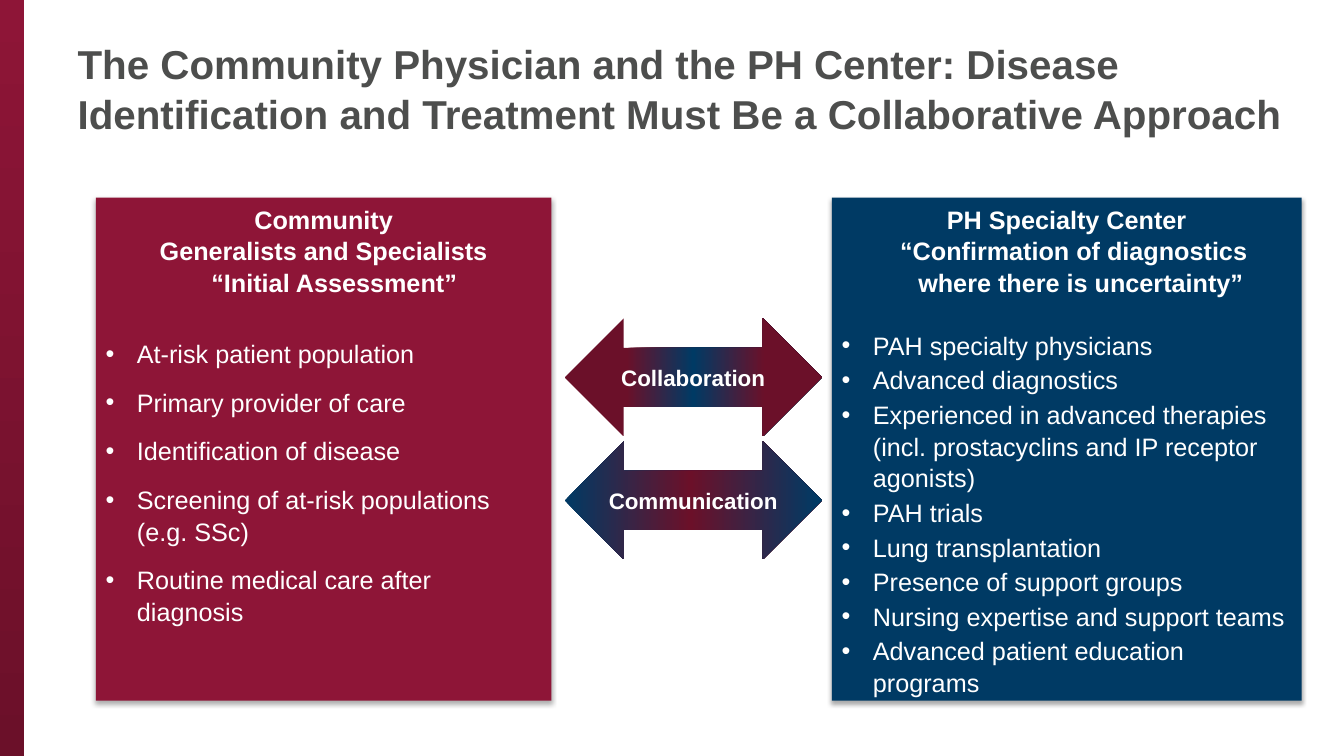
from lxml import etree
from pptx import Presentation
from pptx.dml.color import RGBColor
from pptx.enum.shapes import MSO_SHAPE as SHAPE
from pptx.enum.text import MSO_ANCHOR as ANCHOR, MSO_AUTO_SIZE as AUTO, PP_ALIGN as ALIGN
from pptx.oxml.ns import qn
from pptx.util import Inches, Pt

COLORS = {"crimson": "8E1537", "maroon": "6B1029", "navy": "003A64",
          "gray": "4D4E4D", "white": "FFFFFF", "black": "000000"}


def add_block(shape, box, stops, angle=0):
    """Add a borderless shape with a plain or gradient fill."""
    sp = slide.shapes.add_shape(shape, *[Inches(v) for v in box])
    sp.shadow.inherit = False
    sp.line.fill.background()
    if len(stops) == 1:
        sp.fill.solid()
        sp.fill.fore_color.rgb = RGBColor.from_string(COLORS[stops[0][1]])
        return sp
    sp.fill.gradient()
    sp.fill.gradient_angle = angle
    stop_list = sp._element.spPr.find(qn("a:gradFill")).find(qn("a:gsLst"))
    for old in list(stop_list):
        stop_list.remove(old)
    for pos, color in stops:
        gs = etree.SubElement(stop_list, qn("a:gs"), pos=str(pos * 1000))
        etree.SubElement(gs, qn("a:srgbClr"), val=COLORS[color])
    return sp


def style(p, size, color, bold, align):
    p.font.name = "Arial"
    p.font.size = Pt(size)
    p.font.bold = bold
    p.font.color.rgb = RGBColor.from_string(COLORS[color])
    p.alignment = align


prs = Presentation()
prs.slide_width, prs.slide_height = Inches(13.33), Inches(7.5)
slide = prs.slides.add_slide(prs.slide_layouts[5])

# Side bar
add_block(SHAPE.RECTANGLE, (-0.01, 0, 0.25, 7.51), [(0, "crimson"), (100, "maroon")], 270)

# Title
title = slide.shapes.title
title.left, title.top = Inches(0.67), Inches(0.22)
title.width, title.height = Inches(12.39), Inches(1.3)
tf = title.text_frame
tf.text = ("The Community Physician and the PH Center: Disease Identification "
           "and Treatment Must Be a Collaborative Approach")
tf.auto_size, tf.vertical_anchor = AUTO.NONE, ANCHOR.MIDDLE
style(tf.paragraphs[0], 28.8, "gray", True, ALIGN.LEFT)
tf.paragraphs[0].line_spacing = 1.04

# Panels: left, width, color, headings (text, indent), bullets (text, level),
# space before the list, space before and after each bullet
panels = [
    (0.95, 4.52, "crimson",
     [("Community", 0), ("Generalists and Specialists", 0), ("“Initial Assessment”", 0.21)],
     [("At-risk patient population", 0), ("Primary provider of care", 0),
      ("Identification of disease", 0),
      ("Screening of at-risk populations (e.g. SSc)", 0),
      ("Routine medical care after diagnosis", 0)], 28, 6, 6),
    (8.25, 4.66, "navy",
     [("PH Specialty Center", 0), ("“Confirmation of diagnostics", 0.14),
      ("where there is uncertainty”", 0.28)],
     [("PAH specialty physicians", 1), ("Advanced diagnostics", 1),
      ("Experienced in advanced therapies (incl. prostacyclins and IP receptor agonists)", 1),
      ("PAH trials", 1), ("Lung transplantation", 1),
      ("Presence of support groups", 3), ("Nursing expertise and support teams", 3),
      ("Advanced patient education programs", 3)], 22, 0, 2),
]
for left, width, color, headings, bullets, gap, before, after in panels:
    sp = add_block(SHAPE.RECTANGLE, (left, 1.96, width, 4.99), [(0, color)])
    # Soft shadow below the panel
    shadow = etree.SubElement(sp._element.spPr.find(qn("a:effectLst")), qn("a:outerShdw"),
                              blurRad=str(Pt(3.5)), dist=str(Pt(2.2)), dir="5400000",
                              rotWithShape="0")
    tint = etree.SubElement(shadow, qn("a:srgbClr"), val=COLORS["black"])
    etree.SubElement(tint, qn("a:alpha"), val="32000")

    tf = sp.text_frame
    tf.word_wrap, tf.vertical_anchor = True, ANCHOR.TOP
    tf.text = "\n".join(text for text, _ in headings + bullets)
    for p in tf.paragraphs:
        p.line_spacing = 1.05
    for p, (_, indent) in zip(tf.paragraphs, headings):
        style(p, 18, "white", True, ALIGN.CENTER)
        p._p.get_or_add_pPr().set("marL", str(Inches(indent)))
    for i, (p, (_, level)) in enumerate(zip(tf.paragraphs[len(headings):], bullets)):
        style(p, 18, "white", False, ALIGN.LEFT)
        p.level = level
        p.space_before, p.space_after = Pt(before if i else gap), Pt(after)
        pPr = p._p.get_or_add_pPr()
        pPr.set("marL", str(Inches(0.31)))
        pPr.set("indent", str(Inches(-0.31)))
        bullet_font = etree.Element(qn("a:buFont"), typeface="Arial")
        bullet = etree.Element(qn("a:buChar"), char="•")
        pPr.find(qn("a:defRPr")).addprevious(bullet_font)
        bullet_font.addnext(bullet)

# Two-way arrows
arrows = [
    ("Collaboration", 3.16, [(24, "maroon"), (50, "navy"), (78, "maroon")]),
    ("Communication", 4.38, [(0, "navy"), (49, "maroon"), (99, "navy")]),
]
for label, top, stops in arrows:
    sp = add_block(SHAPE.LEFT_RIGHT_ARROW, (5.6, top, 2.55, 1.17), stops)
    tf = sp.text_frame
    tf.text = label
    tf.word_wrap, tf.vertical_anchor = True, ANCHOR.MIDDLE
    style(tf.paragraphs[0], 16, "white", True, ALIGN.CENTER)

prs.save("out.pptx")
